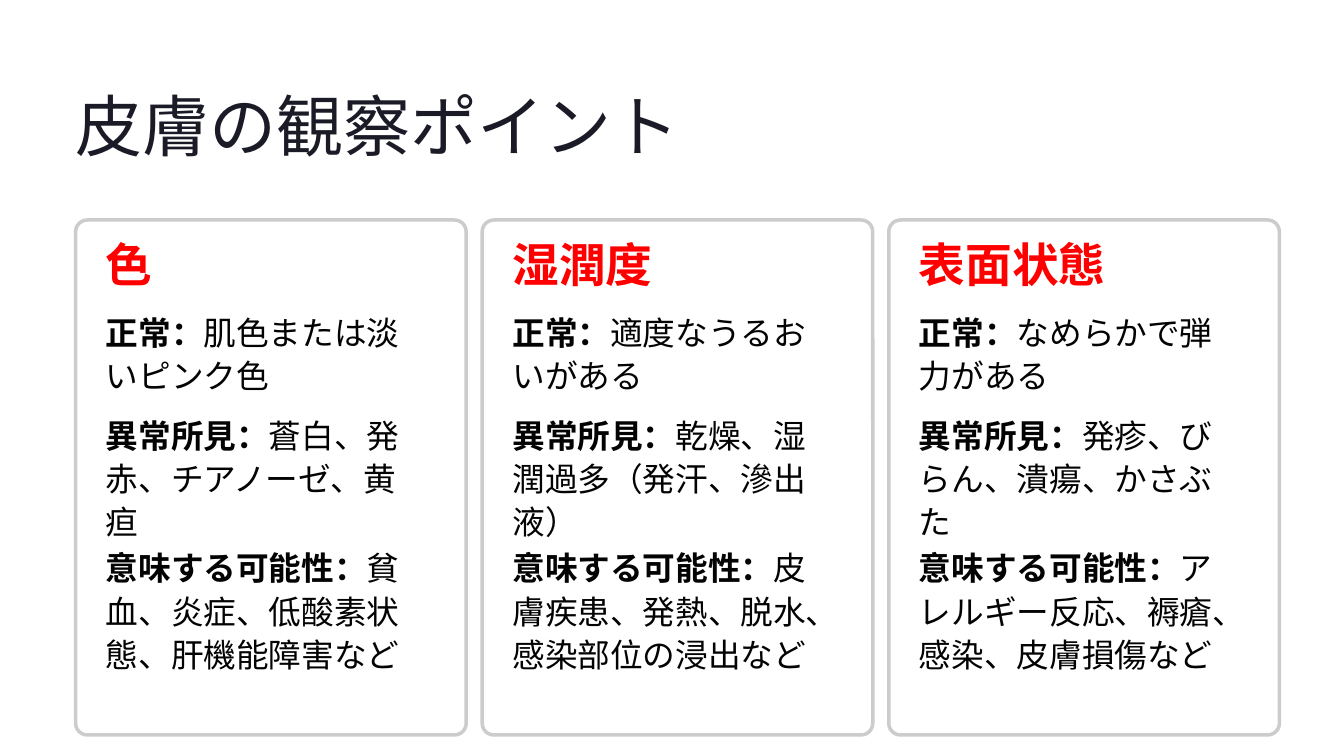
"""Build a slide of three cards on what to observe about the skin."""
from lxml.etree import SubElement
from pptx import Presentation
from pptx.dml.color import RGBColor
from pptx.enum.shapes import MSO_SHAPE
from pptx.enum.text import MSO_ANCHOR, MSO_AUTO_SIZE, PP_ALIGN
from pptx.oxml.ns import qn
from pptx.util import Pt

WHITE = RGBColor(0xFF, 0xFF, 0xFF)
BORDER = RGBColor(0xCC, 0xCC, 0xCC)
NAVY = RGBColor(0x1B, 0x1B, 0x27)
RED = RGBColor(0xFF, 0x00, 0x00)
BLACK = RGBColor(0x03, 0x03, 0x03)

CARD_LEFT, CARD_TOP, CARD_WIDTH, CARD_HEIGHT = 64.8, 188.6, 334.8, 441.4
CARD_PITCH = 348.5
PADDING = 25.9
TEXT_WIDTH = 272.9

FINDINGS = [("正常：", 265, 74), ("異常所見：", 352.8, 74), ("意味する可能性：", 466.6, 111)]
CARDS = [
    ("色", ["肌色または淡いピンク色", "蒼白、発赤、チアノーゼ、黄疸",
           "貧血、炎症、低酸素状態、肝機能障害など"]),
    ("湿潤度", ["適度なうるおいがある", "乾燥、湿潤過多（発汗、滲出液）",
             "皮膚疾患、発熱、脱水、感染部位の浸出など"]),
    ("表面状態", ["なめらかで弾力がある", "発疹、びらん、潰瘍、かさぶた",
              "アレルギー反応、褥瘡、感染、皮膚損傷など"]),
]


class SlideBuilder:
    """Hold the text styles and the current slide."""

    styles = {
        "title": {"name": "Inter", "size": Pt(57.5), "color": NAVY, "spacing": Pt(72)},
        "heading": {"name": "Inter", "size": Pt(40), "color": RED, "spacing": Pt(36)},
        "body": {"name": "Cabin", "size": Pt(28), "color": BLACK, "spacing": Pt(37)},
    }
    frame_format = {
        "margin_left": 0, "margin_top": 0, "margin_right": 0, "margin_bottom": 0,
        "word_wrap": True, "auto_size": MSO_AUTO_SIZE.NONE,
        "vertical_anchor": MSO_ANCHOR.TOP,
    }

    def __init__(self, presentation):
        """Add a slide that has a title only."""
        self.slide = presentation.slides.add_slide(presentation.slide_layouts[5])

    def fill_text(self, shape, style_name, runs):
        """Fill a shape with pairs of text and boldness in a named style."""
        style = self.styles[style_name]
        frame = shape.text_frame
        for name, value in self.frame_format.items():
            setattr(frame, name, value)
        paragraph = frame.paragraphs[0]
        paragraph.alignment = PP_ALIGN.LEFT
        paragraph.line_spacing = style["spacing"]
        for text, bold in runs:
            run = paragraph.add_run()
            run.text = text
            for name, value in {"name": style["name"], "size": style["size"], "bold": bold}.items():
                setattr(run.font, name, value)
            run.font.color.rgb = style["color"]

    def title(self, text, left, top, width, height):
        """Move and fill the title placeholder."""
        shape = self.slide.shapes.title
        position = {"left": left, "top": top, "width": width, "height": height}
        for name, value in position.items():
            setattr(shape, name, Pt(value))
        self.fill_text(shape, "title", [(text, False)])

    def text(self, style_name, runs, left, top, width, height):
        """Add a text box."""
        box = self.slide.shapes.add_textbox(Pt(left), Pt(top), Pt(width), Pt(height))
        self.fill_text(box, style_name, runs)

    def panel(self, left, top, width, height):
        """Add a bordered rounded panel with a slightly transparent fill."""
        shape = self.slide.shapes.add_shape(
            MSO_SHAPE.ROUNDED_RECTANGLE, Pt(left), Pt(top), Pt(width), Pt(height))
        shape.adjustments[0] = 0.03
        shape.shadow.inherit = False
        shape.fill.solid()
        shape.fill.fore_color.rgb = WHITE
        color = shape.element.spPr.find(qn("a:solidFill"))[0]
        SubElement(color, qn("a:alpha"), val="95000")
        shape.line.color.rgb = BORDER
        shape.line.width = Pt(3)

    def card(self, left, heading, details):
        """Add a panel with its heading and findings."""
        self.panel(left, CARD_TOP, CARD_WIDTH, CARD_HEIGHT)
        text_left = left + PADDING
        self.text("heading", [(heading, True)], text_left, CARD_TOP + PADDING, TEXT_WIDTH, 36)
        for (label, top, height), detail in zip(FINDINGS, details):
            self.text("body", [(label, True), (detail, False)],
                      text_left, top, TEXT_WIDTH, height)


def main():
    """Build and save the presentation."""
    presentation = Presentation()
    presentation.slide_width = Pt(1152)
    presentation.slide_height = Pt(648)
    builder = SlideBuilder(presentation)
    builder.title("皮膚の観察ポイント", CARD_LEFT, 69.8, 579, 72)
    for index, (heading, details) in enumerate(CARDS):
        builder.card(CARD_LEFT + index * CARD_PITCH, heading, details)
    presentation.save("out.pptx")


if __name__ == "__main__":
    main()
